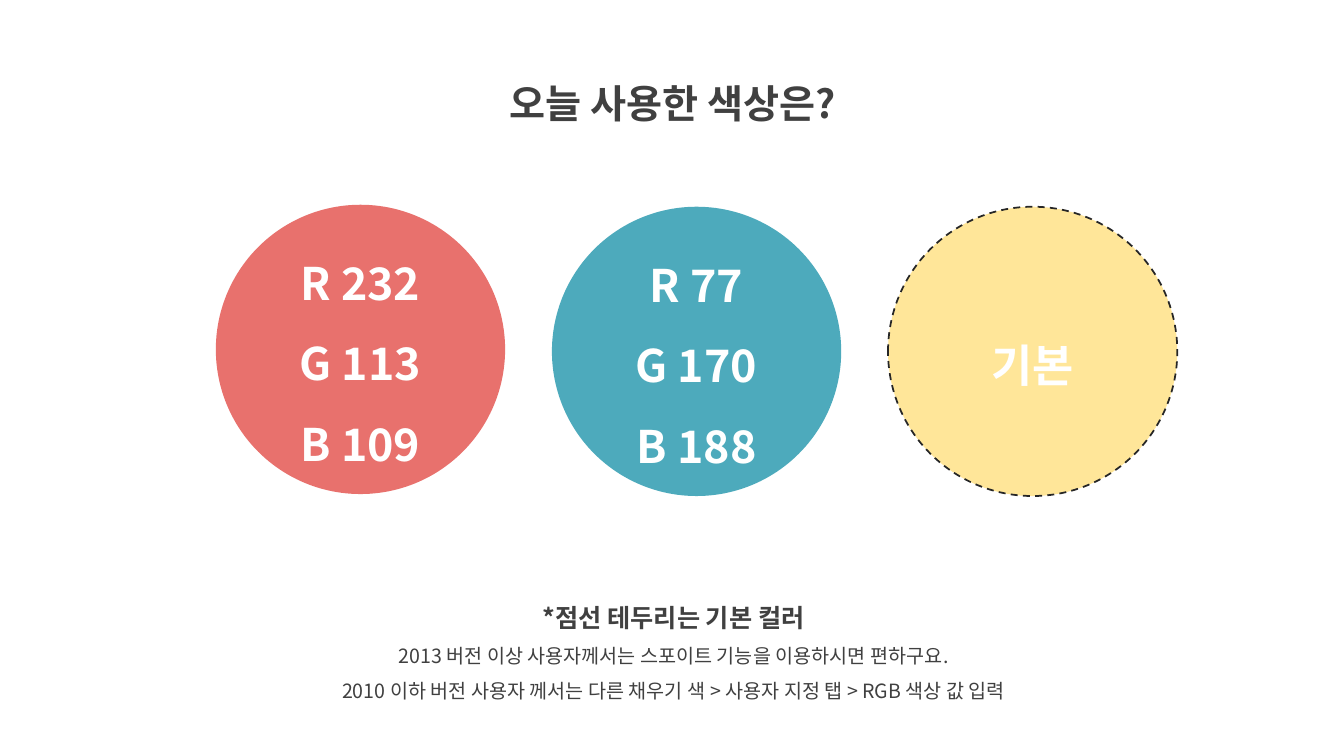
import pptx
import pptx.dml.color
import pptx.enum.dml
import pptx.enum.shapes
import pptx.enum.text
import pptx.oxml
import pptx.oxml.ns
import pptx.util
from pptx.util import Cm

FONT = "Noto Sans CJK KR"
DARK = "404040"
WHITE = "FFFFFF"


def color(hex_string):
    return pptx.dml.color.RGBColor.from_string(hex_string)


def write_lines(text_frame, lines, font_color, anchor):
    """Fill a text frame with centred (text, size, bold) lines."""
    text_frame.word_wrap = True
    text_frame.auto_size = pptx.enum.text.MSO_AUTO_SIZE.NONE
    text_frame.vertical_anchor = anchor
    text_frame.text = "\n".join(text for text, _, _ in lines)
    for paragraph, (_, size, bold) in zip(text_frame.paragraphs, lines):
        paragraph.alignment = pptx.enum.text.PP_ALIGN.CENTER
        paragraph.line_spacing = 1.5
        for run in paragraph.runs:
            run.font.name = FONT
            run.font.size = pptx.util.Pt(size)
            run.font.bold = bold
            run.font.color.rgb = color(font_color)
            # Korean glyphs take the East Asian typeface
            east_asian = pptx.oxml.parse_xml(
                f'<a:ea {pptx.oxml.ns.nsdecls("a")} typeface="{FONT}"/>')
            run.font._element.find(pptx.oxml.ns.qn("a:latin")).addnext(east_asian)


def add_title(slide, left, top, width, height):
    title = slide.shapes.title
    title.left, title.top, title.width, title.height = left, top, width, height
    write_lines(title.text_frame, [("오늘 사용한 색상은?", 28, True)], DARK,
                pptx.enum.text.MSO_ANCHOR.TOP)


def add_color_circle(slide, left, top, diameter, fill, labels, dashed):
    circle = slide.shapes.add_shape(
        pptx.enum.shapes.MSO_SHAPE.OVAL, left, top, diameter, diameter)
    circle.shadow.inherit = False
    circle.fill.solid()
    circle.fill.fore_color.rgb = color(fill)
    if dashed:
        circle.line.color.rgb = color("262626")
        circle.line.width = pptx.util.Pt(1.25)
        circle.line.dash_style = pptx.enum.dml.MSO_LINE.DASH
    else:
        circle.line.fill.background()
    write_lines(circle.text_frame, [(label, 32, True) for label in labels],
                WHITE, pptx.enum.text.MSO_ANCHOR.MIDDLE)


def add_palette(slide, left, top, diameter, pitch):
    # Fill, labels, dashed outline, vertical offset
    swatches = [
        ("E8716D", ["R 232", "G 113", "B 109"], False, Cm(-0.05)),
        ("4DAABC", ["R 77", "G 170", "B 188"], False, 0),
        ("FFE699", ["기본"], True, 0),
    ]
    for index, (fill, labels, dashed, offset) in enumerate(swatches):
        add_color_circle(slide, left + index * pitch, top + offset, diameter,
                         fill, labels, dashed)


def add_usage_notes(slide, left, top, width, height):
    box = slide.shapes.add_textbox(left, top, width, height)
    write_lines(box.text_frame, [
        ("*점선 테두리는 기본 컬러", 18, True),
        ("2013 버전 이상 사용자께서는 스포이트 기능을 이용하시면 편하구요.", 14, False),
        ("2010 이하 버전 사용자 께서는 다른 채우기 색 > 사용자 지정 탭 > RGB 색상 값 입력",
         14, False),
    ], DARK, pptx.enum.text.MSO_ANCHOR.TOP)


def main():
    presentation = pptx.Presentation()
    presentation.slide_width = Cm(33.87)
    presentation.slide_height = Cm(19.05)
    slide = presentation.slides.add_slide(presentation.slide_layouts[5])
    slide.background.fill.solid()
    slide.background.fill.fore_color.rgb = color(WHITE)

    add_title(slide, Cm(11.07), Cm(1.27), Cm(11.76), Cm(1.83))
    add_palette(slide, Cm(5.44), Cm(5.21), Cm(7.29), Cm(8.47))
    add_usage_notes(slide, Cm(6.83), Cm(14.66), Cm(20.29), Cm(3.2))
    presentation.save("out.pptx")


if __name__ == "__main__":
    main()
